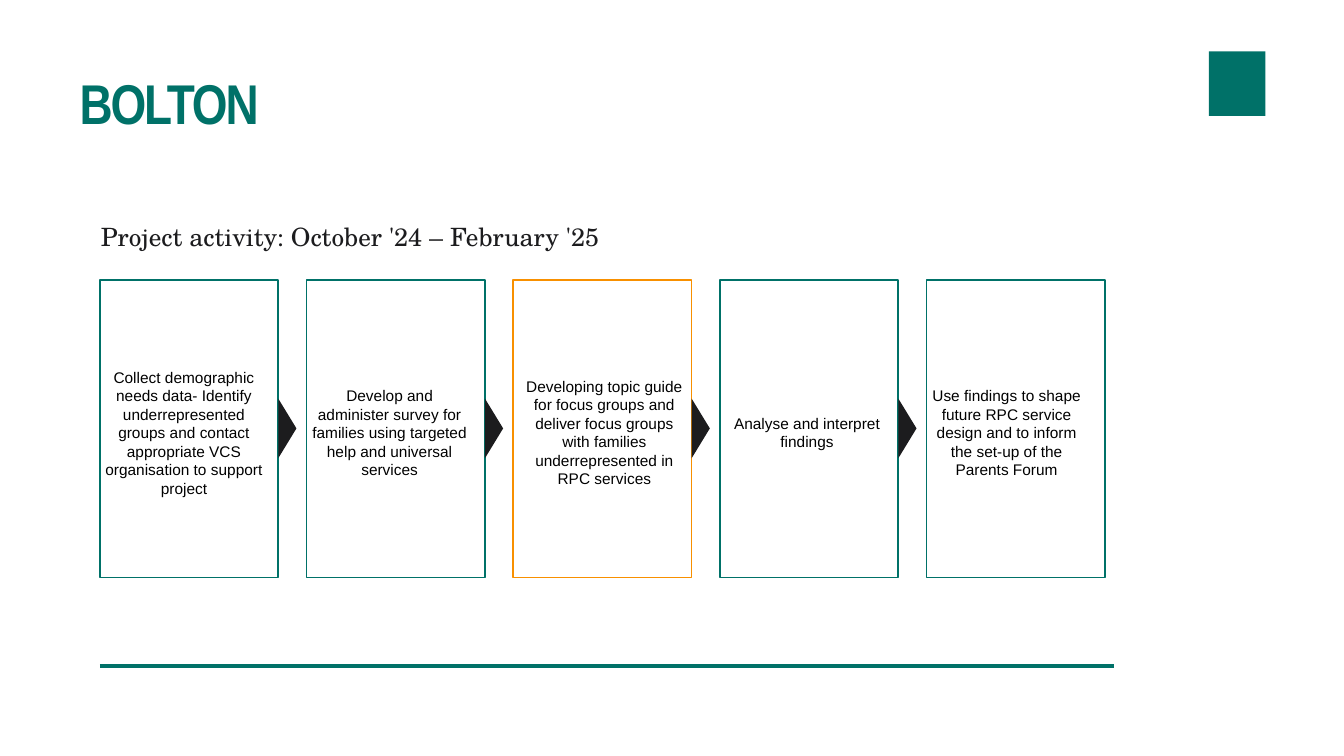
from pptx import Presentation
from pptx.dml.color import RGBColor
from pptx.enum.shapes import MSO_CONNECTOR, MSO_SHAPE
from pptx.enum.text import MSO_ANCHOR, PP_ALIGN
from pptx.oxml.ns import qn
from pptx.util import Inches, Pt

GREEN, ORANGE, INK, BLACK = "007168", "F89000", "1C1C1E", "000000"

# Grid of the process: one column per step
LEFT, TOP, PITCH = 0.99, 2.78, 2.05
STEP_W, STEP_H = 1.77, 2.95
TEXT_MIDDLE = 4.29
ARROW_SPAN, ARROW_DEPTH, ARROW_MIDDLE = 0.59, 0.18, 4.25

# Outline colour, sideways nudge of the text, wording
STEPS = [
    (GREEN, -0.05, "Collect demographic needs data- Identify underrepresented groups "
                   "and contact appropriate VCS organisation to support project"),
    (GREEN, -0.06, "Develop and administer survey for families using targeted help "
                   "and universal services"),
    (ORANGE, 0.02, "Developing topic guide for focus groups and deliver focus groups "
                   "with families underrepresented in RPC services"),
    (GREEN, -0.02, "Analyse and interpret findings"),
    (GREEN, -0.09, "Use findings to shape future RPC service design and to inform "
                   "the set-up of the Parents Forum"),
]

TITLE = {"name": "Arial Narrow", "size": Pt(40), "bold": True}
SUBTITLE = {"name": "TeX Gyre Schola", "size": Pt(18)}
STEP = {"name": "Arial", "size": Pt(11)}


def colour(value):
    return RGBColor.from_string(value)


def add_block(slide, preset, box, fill=None, outline=None):
    block = slide.shapes.add_shape(preset, *map(Inches, box))
    block.shadow.inherit = False
    if fill:
        block.fill.solid()
        block.fill.fore_color.rgb = colour(fill)
    else:
        block.fill.background()
    if outline:
        block.line.color.rgb = colour(outline)
        block.line.width = Pt(1.25)
    else:
        block.line.fill.background()
    return block


def add_text(slide, box, wording, style, ink, anchor=MSO_ANCHOR.MIDDLE,
             align=PP_ALIGN.LEFT, inset=True):
    frame = slide.shapes.add_textbox(*map(Inches, box)).text_frame
    frame.word_wrap = True
    frame.vertical_anchor = anchor
    if not inset:
        for side in ("left", "right", "top", "bottom"):
            setattr(frame, f"margin_{side}", 0)
    paragraph = frame.paragraphs[0]
    paragraph.alignment = align
    run = paragraph.add_run()
    run.text = wording
    for attribute, value in style.items():
        setattr(run.font, attribute, value)
    run.font.color.rgb = colour(ink)
    return paragraph


def add_rule(slide, start, end, y):
    rule = slide.shapes.add_connector(
        MSO_CONNECTOR.STRAIGHT, Inches(start), Inches(y), Inches(end), Inches(y))
    rule.line.color.rgb = colour(GREEN)
    rule.line.width = Pt(3)
    properties = rule._element.spPr
    properties.append(properties.makeelement(qn("a:effectLst"), {}))


def add_heading(slide):
    title = add_text(slide, (0.79, 0.4, 11, 1.31), "BOLTON", TITLE, GREEN, inset=False)
    title.line_spacing = 0.9
    title.runs[0].font._element.set("spc", "-150")
    add_text(slide, (1, 2.2, 5.52, 0.61), "Project activity: October '24 – February '25",
             SUBTITLE, INK, anchor=MSO_ANCHOR.TOP, inset=False)


def add_arrow(slide, tail):
    # The triangle is laid out upright, then turned about its centre
    left = tail + (ARROW_DEPTH - ARROW_SPAN) / 2
    top = ARROW_MIDDLE - ARROW_DEPTH / 2
    arrow = add_block(slide, MSO_SHAPE.ISOSCELES_TRIANGLE,
                      (left, top, ARROW_SPAN, ARROW_DEPTH), fill=INK)
    arrow.rotation = 90


def add_process(slide):
    lefts = [LEFT + PITCH * column for column in range(len(STEPS))]
    for left, (outline, nudge, wording) in zip(lefts, STEPS):
        add_block(slide, MSO_SHAPE.RECTANGLE, (left, TOP, STEP_W, STEP_H), outline=outline)
        add_text(slide, (left + nudge, TEXT_MIDDLE - 0.7, STEP_W, 1.4), wording,
                 STEP, BLACK, align=PP_ALIGN.CENTER)
    for left in lefts[:-1]:
        add_arrow(slide, left + STEP_W)


def main():
    deck = Presentation()
    deck.slide_width, deck.slide_height = Inches(13.33), Inches(7.5)
    slide = deck.slides.add_slide(deck.slide_layouts[6])

    # Plain emblem in the corner
    add_block(slide, MSO_SHAPE.RECTANGLE, (11.99, 0.51, 0.56, 0.64), fill=GREEN)
    add_heading(slide)
    add_process(slide)
    # Closing rule under the steps
    add_rule(slide, LEFT, 11.05, 6.61)

    deck.save("out.pptx")


if __name__ == "__main__":
    main()
